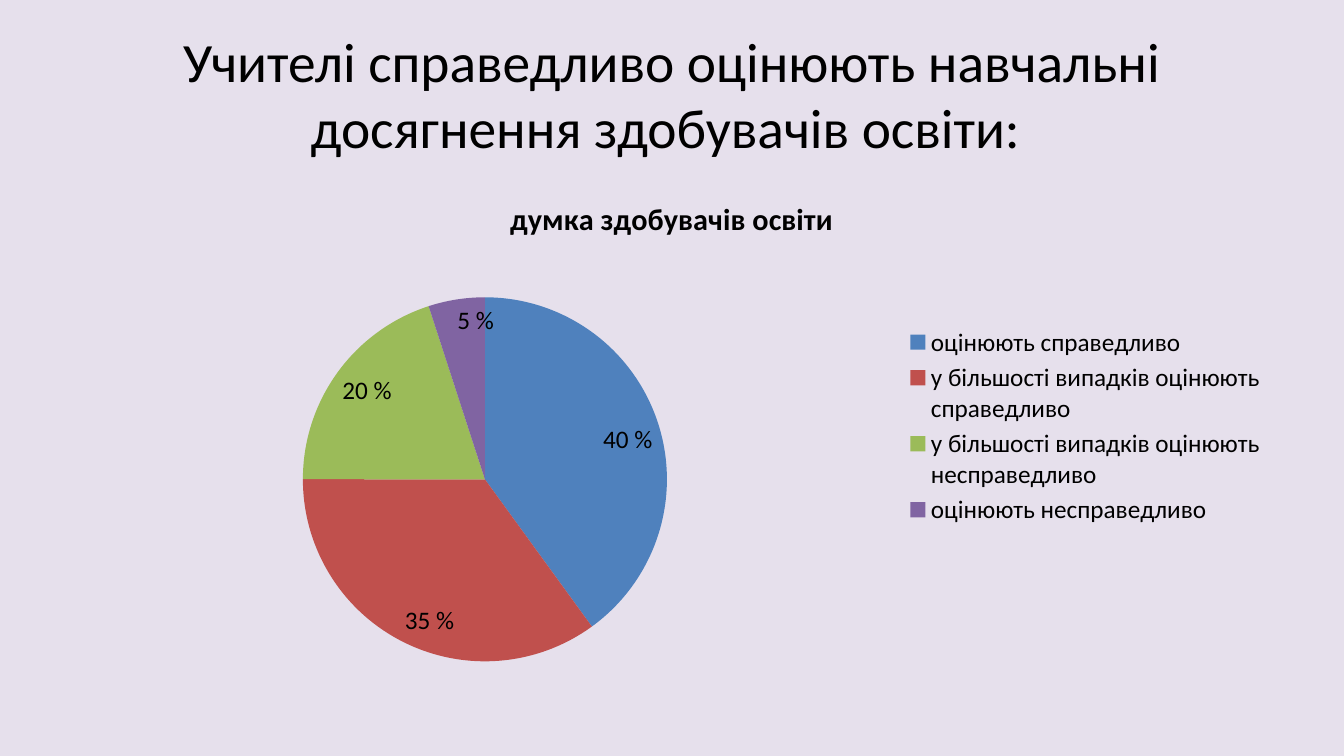
from dataclasses import dataclass

from lxml.etree import SubElement
from pptx import Presentation
from pptx.chart.data import CategoryChartData
from pptx.dml.color import RGBColor
from pptx.enum.chart import XL_CHART_TYPE, XL_LABEL_POSITION, XL_LEGEND_POSITION
from pptx.enum.text import MSO_ANCHOR, PP_ALIGN
from pptx.oxml.ns import qn
from pptx.util import Cm, Pt


@dataclass(frozen=True)
class Theme:
    """Colours, font and type sizes of the slide."""

    font: str = "Calibri"
    background: str = "E6E0EC"
    text: str = "000000"
    slices: tuple = ("4F81BD", "C0504D", "9BBB59", "8064A2")
    title_size: float = 39.6
    chart_title_size: float = 21.6
    chart_size: float = 18


THEME = Theme()
TITLE = "Учителі справедливо оцінюють навчальні досягнення здобувачів освіти: "
CHART_TITLE = "думка здобувачів освіти"
OPINIONS = {
    "оцінюють справедливо": 0.4,
    "у більшості випадків оцінюють справедливо": 0.35,
    "у більшості випадків оцінюють несправедливо": 0.2,
    "оцінюють несправедливо": 0.05,
}
PIE_LAYOUT = {"x": 0.195, "y": 0.242, "w": 0.301, "h": 0.73}


def apply_format(target, values):
    """Set every attribute named in a dict of format values."""
    for name, value in values.items():
        setattr(target, name, value)


def style_font(font, size, bold=False):
    """Give a font the theme's typeface and text colour."""
    apply_format(font, {"name": THEME.font, "size": Pt(size), "bold": bold})
    font.color.rgb = RGBColor.from_string(THEME.text)


def fill_solid(fill, colour):
    """Fill with one plain colour."""
    fill.solid()
    fill.fore_color.rgb = RGBColor.from_string(colour)


def add_title(slide, box):
    """Place the centred heading in the box."""
    frame = slide.shapes.add_textbox(*box).text_frame
    apply_format(frame, {"word_wrap": True, "vertical_anchor": MSO_ANCHOR.MIDDLE})
    paragraph = frame.paragraphs[0]
    apply_format(paragraph, {"text": TITLE, "alignment": PP_ALIGN.CENTER})
    style_font(paragraph.runs[0].font, THEME.title_size)


def place_plot(chart, fractions):
    """Fix the inner plot area at fractions of the chart's box."""
    plot_area = chart.plots[0]._element.getparent()
    layout = plot_area.find(qn("c:layout"))
    if layout is None:
        layout = SubElement(plot_area, qn("c:layout"))
        plot_area.insert(0, layout)
    manual = SubElement(layout, qn("c:manualLayout"))
    settings = {"layoutTarget": "inner", "xMode": "edge", "yMode": "edge", **fractions}
    for name, value in settings.items():
        SubElement(manual, qn(f"c:{name}")).set("val", str(value))


def add_opinion_pie(slide, box):
    """Place the pie chart with its title, labels and legend in the box."""
    data = CategoryChartData(number_format="0\\ %")
    data.categories = list(OPINIONS)
    data.add_series(CHART_TITLE, list(OPINIONS.values()))
    chart = slide.shapes.add_chart(XL_CHART_TYPE.PIE, *box, data).chart
    style_font(chart.font, THEME.chart_size)

    chart.has_title = True
    chart.chart_title.include_in_layout = False
    title_paragraph = chart.chart_title.text_frame.paragraphs[0]
    title_paragraph.text = CHART_TITLE
    style_font(title_paragraph.runs[0].font, THEME.chart_title_size, bold=True)

    chart.has_legend = True
    apply_format(
        chart.legend,
        {"position": XL_LEGEND_POSITION.RIGHT, "include_in_layout": False},
    )

    plot = chart.plots[0]
    apply_format(plot, {"vary_by_categories": True, "has_data_labels": True})
    apply_format(
        plot.data_labels,
        {
            "show_value": True,
            "show_percentage": False,
            "number_format": "0\\ %",
            "number_format_is_linked": False,
            "position": XL_LABEL_POSITION.INSIDE_END,
        },
    )
    style_font(plot.data_labels.font, THEME.chart_size)
    for index, colour in enumerate(THEME.slices):
        fill_solid(plot.series[0].points[index].format.fill, colour)
    place_plot(chart, PIE_LAYOUT)


def main():
    """Build the slide and save it."""
    presentation = Presentation()
    apply_format(
        presentation, {"slide_width": Cm(33.87), "slide_height": Cm(19.05)}
    )
    slide = presentation.slides.add_slide(presentation.slide_layouts[6])
    fill_solid(slide.background.fill, THEME.background)
    margin, width = Cm(1.69), Cm(30.48)
    add_title(slide, (margin, Cm(0.76), width, Cm(3.18)))
    add_opinion_pie(slide, (margin, Cm(4.45), width, Cm(12.57)))
    presentation.save("out.pptx")


if __name__ == "__main__":
    main()
